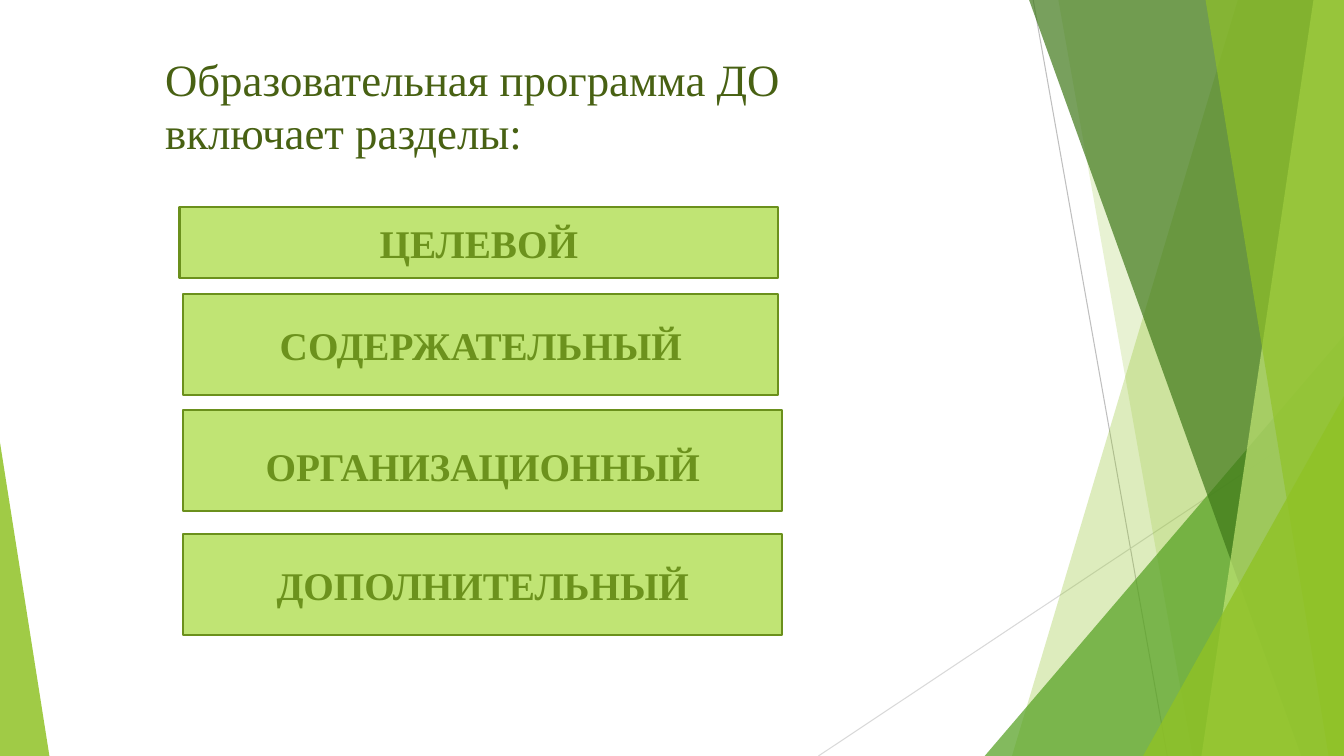
"""Build a slide listing the sections of a preschool educational programme."""
import lxml.etree
import pptx
import pptx.dml.color
import pptx.enum.shapes
import pptx.enum.text
import pptx.oxml.ns
import pptx.util

Pt = pptx.util.Pt
qn = pptx.oxml.ns.qn
SHAPE = pptx.enum.shapes.MSO_SHAPE
WIDTH, HEIGHT = 960, 540
FONT = "Times New Roman"
COLOURS = {
    "lime": "90C226",
    "green": "54A021",
    "pine": "3F7819",
    "pale": "C0E474",
    "border": "6B901C",
    "label": "6C921D",
    "title": "486113",
    "grey": "BFBFBF",
    "light grey": "D9D9D9",
}


def rgb(name):
    """Return the named colour."""
    return pptx.dml.color.RGBColor.from_string(COLOURS[name])


def paint(shape, colour, opacity=100):
    """Fill a shape with a colour at a percentage of opacity."""
    shape.shadow.inherit = False
    shape.fill.solid()
    shape.fill.fore_color.rgb = rgb(colour)
    if opacity < 100:
        tint = shape.element.spPr.find(qn("a:solidFill"))[0]
        lxml.etree.SubElement(tint, qn("a:alpha"), val=str(opacity * 1000))


def add_ray(slide, start, end, colour):
    """Draw a thin background line."""
    ray = slide.shapes.add_connector(
        pptx.enum.shapes.MSO_CONNECTOR.STRAIGHT, *map(Pt, start + end))
    ray.line.color.rgb = rgb(colour)
    ray.line.width = Pt(0.75)
    lxml.etree.SubElement(ray.element.spPr, qn("a:effectLst"))


def add_facet(slide, top_x, bottom_x, colour, opacity):
    """Draw a full-height facet with a slanted left edge."""
    outline = slide.shapes.build_freeform(Pt(top_x), Pt(0))
    corners = [(WIDTH, 0), (WIDTH, HEIGHT), (bottom_x, HEIGHT)]
    outline.add_line_segments([(Pt(x), Pt(y)) for x, y in corners])
    facet = outline.convert_to_shape()
    paint(facet, colour, opacity)
    facet.line.fill.background()


def add_corner(slide, left, top, width, apex, colour, opacity):
    """Draw a right triangle standing on the bottom edge."""
    corner = slide.shapes.add_shape(
        SHAPE.ISOSCELES_TRIANGLE, Pt(left), Pt(top), Pt(width), Pt(HEIGHT - top))
    corner.adjustments[0] = apex
    paint(corner, colour, opacity)
    corner.line.fill.background()


def add_run(paragraph, text, size, colour, bold=False):
    """Append a formatted run."""
    run = paragraph.add_run()
    run.text = text
    run.font.name = FONT
    run.font.size = Pt(size)
    run.font.bold = bold
    run.font.color.rgb = rgb(colour)


def add_title(slide, lines):
    """Add the heading, one run per line."""
    heading = slide.shapes.add_textbox(Pt(110.9), Pt(33.1), Pt(571), Pt(85))
    heading.text_frame.word_wrap = True
    paragraph = heading.text_frame.paragraphs[0]
    for index, line in enumerate(lines):
        if index:
            paragraph.add_line_break()
        add_run(paragraph, line, 32, "title")


def add_section(slide, name, left, top, width, height, top_inset=3.6):
    """Add a bordered box naming one section."""
    section = slide.shapes.add_shape(
        SHAPE.RECTANGLE, Pt(left), Pt(top), Pt(width), Pt(height))
    paint(section, "pale")
    section.line.color.rgb = rgb("border")
    section.line.width = Pt(1.5)
    frame = section.text_frame
    frame.word_wrap = True
    frame.margin_top = Pt(top_inset)
    frame.vertical_anchor = pptx.enum.text.MSO_ANCHOR.MIDDLE
    paragraph = frame.paragraphs[0]
    paragraph.alignment = pptx.enum.text.PP_ALIGN.CENTER
    add_run(paragraph, name, 28, "label", bold=True)


def add_backdrop(slide):
    """Draw the rays and translucent facets from back to front."""
    add_ray(slide, (738, 0), (833.8, HEIGHT), "grey")
    add_ray(slide, (WIDTH, 290.2), (584.6, HEIGHT), "light grey")
    add_facet(slide, 884.2, 722.9, "lime", 30)
    add_facet(slide, 756, 851.8, "lime", 20)
    add_corner(slide, 703.4, 239.8, 256.6, 1, "green", 72)
    add_facet(slide, 735.1, 929.5, "pine", 70)
    add_facet(slide, 938.2, 858.2, "pale", 70)
    add_facet(slide, 861.1, 949, "lime", 65)
    add_corner(slide, 816.5, 283, 143.5, 1, "lime", 80)
    add_corner(slide, 0, 316.1, 35.3, 0, "lime", 85)


def main():
    """Build and save the slide."""
    deck = pptx.Presentation()
    deck.slide_width, deck.slide_height = Pt(WIDTH), Pt(HEIGHT)
    slide = deck.slides.add_slide(deck.slide_layouts[6])
    add_backdrop(slide)
    add_title(slide, ["Образовательная программа ДО", "включает разделы:"])
    add_section(slide, "ЦЕЛЕВОЙ", 128.2, 147.6, 427.7, 51.1)
    add_section(slide, "СОДЕРЖАТЕЛЬНЫЙ", 131, 210.2, 424.8, 72)
    add_section(slide, "ОРГАНИЗАЦИОННЫЙ", 131, 293, 427.7, 72, top_inset=10.6)
    add_section(slide, "ДОПОЛНИТЕЛЬНЫЙ", 131, 381.6, 427.7, 72)
    deck.save("out.pptx")


if __name__ == "__main__":
    main()
